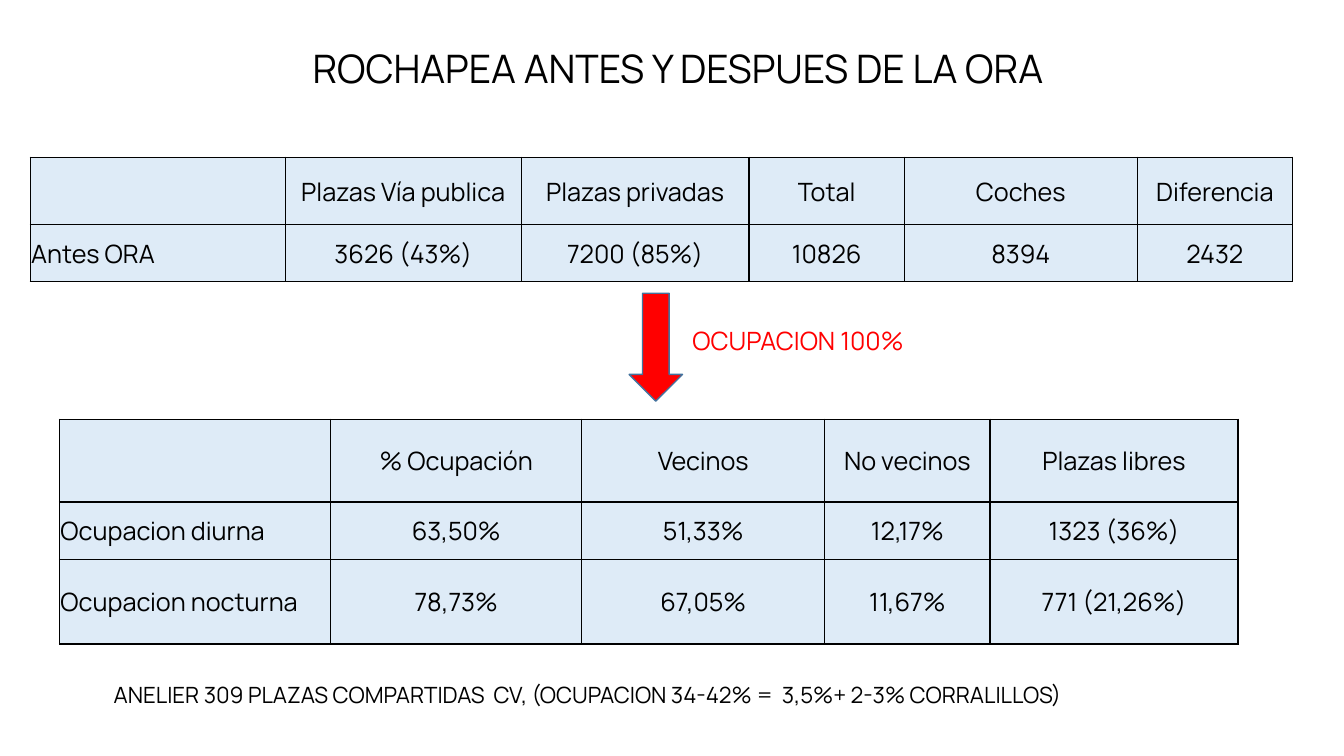
from lxml import etree
from pptx import Presentation
from pptx.dml.color import RGBColor
from pptx.enum.shapes import MSO_SHAPE
from pptx.enum.text import MSO_ANCHOR, PP_ALIGN
from pptx.oxml import parse_xml
from pptx.oxml.ns import nsdecls
from pptx.util import Inches, Pt

COLOURS = {"text": "000000", "cell": "DEEBF7", "border": "000000",
           "alert": "FF0000", "arrow_line": "43739E"}
FONT = "Manrope"

presentation = Presentation()
presentation.slide_width = Inches(13.33)
presentation.slide_height = Inches(7.5)
slide = presentation.slides.add_slide(presentation.slide_layouts[5])


def write(text_frame, text, size, colour="text", align=PP_ALIGN.LEFT):
    text_frame.text = text
    paragraph = text_frame.paragraphs[0]
    paragraph.alignment = align
    font = paragraph.runs[0].font
    font.name = FONT
    font.size = Pt(size)
    font.color.rgb = RGBColor.from_string(COLOURS[colour])


def add_border(cell):
    """Draw a 1 pt line on all four sides; call before filling the cell."""
    for side in ("lnL", "lnR", "lnT", "lnB"):
        cell._tc.get_or_add_tcPr().append(parse_xml(
            f'<a:{side} {nsdecls("a")} w="{Pt(1)}"><a:solidFill>'
            f'<a:srgbClr val="{COLOURS["border"]}"/></a:solidFill></a:{side}>'))


# Title
title = slide.shapes.title
title.left, title.top = Inches(3), Inches(0.39)
title.width, title.height = Inches(7.54), Inches(0.57)
title.text_frame.word_wrap = False
title.text_frame.vertical_anchor = MSO_ANCHOR.TOP
write(title.text_frame, "ROCHAPEA ANTES Y DESPUES DE LA ORA", 28)

# Tables: left, top, column widths, row heights, rows of text
tables = [
    (0.3, 1.56, [2.53, 2.34, 2.26, 1.54, 2.31, 1.54], [0.67, 0.56], [
        ["", "Plazas Vía publica", "Plazas privadas", "Total", "Coches", "Diferencia"],
        ["Antes ORA", "3626 (43%)", "7200 (85%)", "10826", "8394", "2432"],
    ]),
    (0.59, 4.16, [2.69, 2.49, 2.41, 1.64, 2.46], [0.82, 0.57, 0.84], [
        ["", "% Ocupación", "Vecinos", "No vecinos", "Plazas libres"],
        ["Ocupacion diurna", "63,50%", "51,33%", "12,17%", "1323 (36%)"],
        ["Ocupacion nocturna", "78,73%", "67,05%", "11,67%", "771 (21,26%)"],
    ]),
]
for left, top, widths, heights, rows in tables:
    table = slide.shapes.add_table(
        len(rows), len(widths), Inches(left), Inches(top),
        Inches(sum(widths)), Inches(sum(heights))).table
    table.first_row = table.horz_banding = False
    for column, width in zip(table.columns, widths):
        column.width = Inches(width)
    for row, height, texts in zip(table.rows, heights, rows):
        row.height = Inches(height)
        for index, (cell, text) in enumerate(zip(row.cells, texts)):
            cell.margin_left = cell.margin_right = cell.margin_top = Inches(0.01)
            cell.margin_bottom = 0
            cell.vertical_anchor = MSO_ANCHOR.MIDDLE
            add_border(cell)
            cell.fill.solid()
            cell.fill.fore_color.rgb = RGBColor.from_string(COLOURS["cell"])
            if text:
                write(cell.text_frame, text, 18,
                      align=PP_ALIGN.CENTER if index else PP_ALIGN.LEFT)

# Footnote and arrow label
notes = [
    (1.03, 6.71, 9.73, 0.37, 16, "text",
     "ANELIER 309 PLAZAS COMPARTIDAS  CV, (OCUPACION 34-42% =  3,5%+ 2-3% CORRALILLOS)"),
    (6.77, 3.18, 2.3, 0.4, 18, "alert", "OCUPACION 100%"),
]
for left, top, width, height, size, colour, text in notes:
    box = slide.shapes.add_textbox(Inches(left), Inches(top), Inches(width), Inches(height))
    box.text_frame.word_wrap = False
    write(box.text_frame, text, size, colour)

# Arrow between the tables
arrow = slide.shapes.add_shape(
    MSO_SHAPE.DOWN_ARROW, Inches(6.24), Inches(2.91), Inches(0.53), Inches(1.07))
arrow.shadow.inherit = False
arrow.fill.solid()
arrow.fill.fore_color.rgb = RGBColor.from_string(COLOURS["alert"])
arrow.line.color.rgb = RGBColor.from_string(COLOURS["arrow_line"])
arrow.line.width = Pt(1)

presentation.save("out.pptx")
